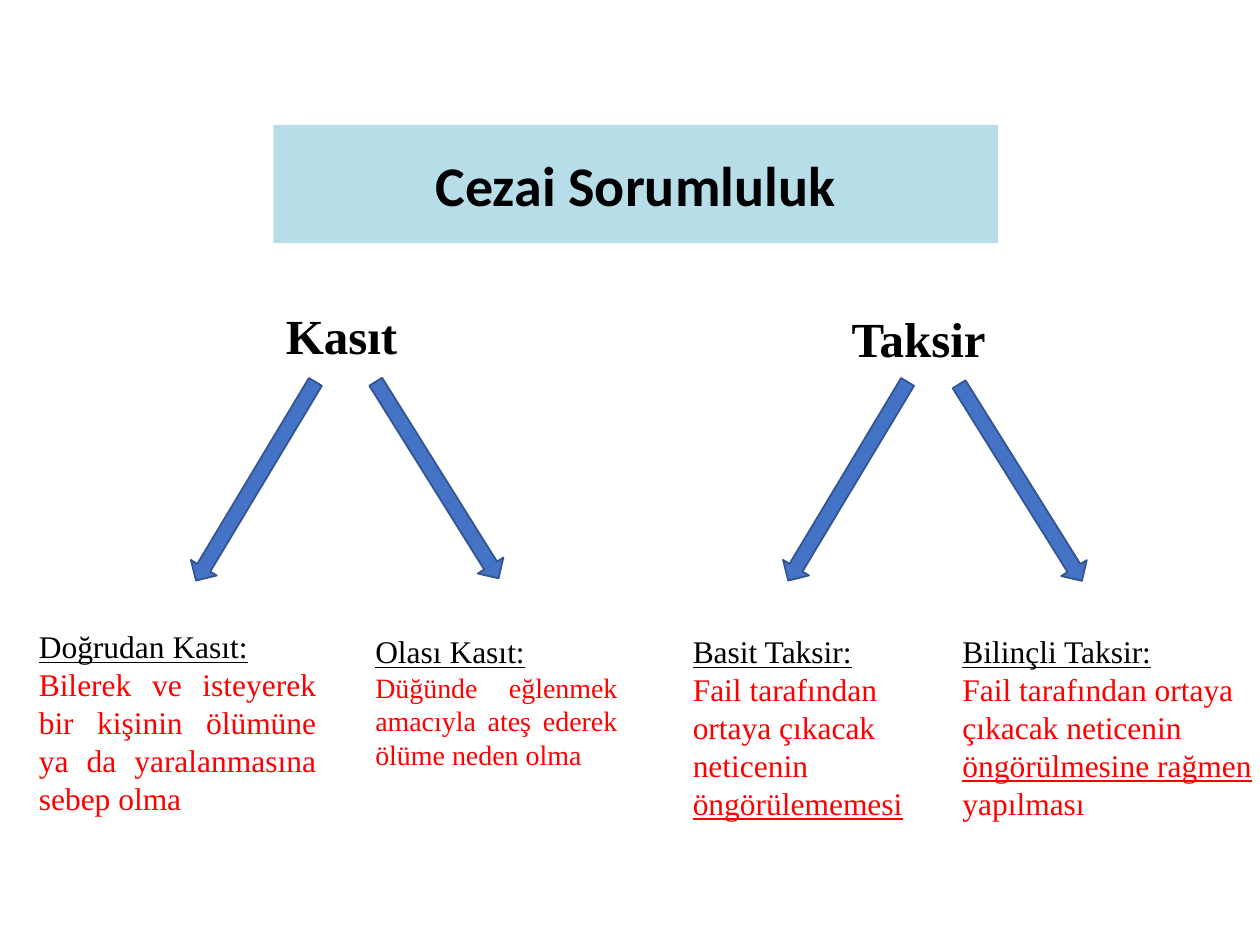
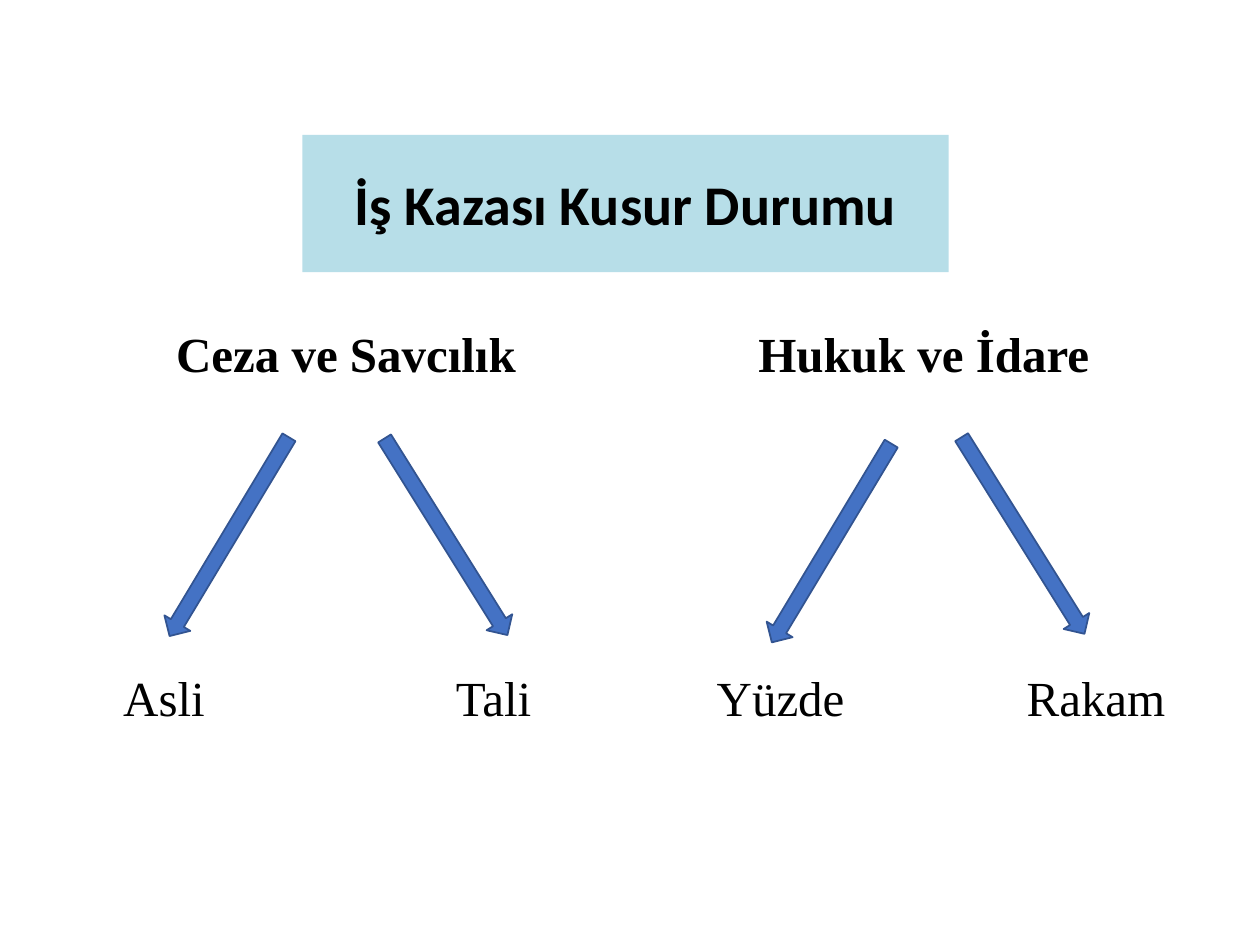
"""Build two slides that branch legal liability and fault into their kinds."""
import pptx
import pptx.dml.color
import pptx.enum.shapes
import pptx.enum.text
import pptx.util

Inches = pptx.util.Inches
ALIGN = pptx.enum.text.PP_ALIGN
AUTO_SIZE = pptx.enum.text.MSO_AUTO_SIZE

BAND = "B7DEE8"
ARROW_FILL = "4472C4"
ARROW_LINE = "325491"
BLACK = "000000"
RED = "FF0000"
TITLE_FONT = "Calibri"
BODY_FONT = "Times New Roman"
ARROW_SIZE = (0.24, 1.84)
LEFT_TURN, RIGHT_TURN = 31, 328


def color(hex_code):
    return pptx.dml.color.RGBColor.from_string(hex_code)


def set_font(paragraph, name, size, hex_code=BLACK, bold=False):
    font = paragraph.font
    font.name = name
    font.size = pptx.util.Pt(size)
    font.bold = bold
    font.color.rgb = color(hex_code)


def add_titled_slide(deck, text, left, top, width, height):
    slide = deck.slides.add_slide(deck.slide_layouts[5])
    title = slide.shapes.title
    title.left, title.top = Inches(left), Inches(top)
    title.width, title.height = Inches(width), Inches(height)
    title.fill.solid()
    title.fill.fore_color.rgb = color(BAND)
    frame = title.text_frame
    frame.text = text
    frame.auto_size = AUTO_SIZE.NONE
    frame.vertical_anchor = pptx.enum.text.MSO_ANCHOR.MIDDLE
    heading = frame.paragraphs[0]
    heading.alignment = ALIGN.CENTER
    set_font(heading, TITLE_FONT, 32, bold=True)
    return slide


def add_text_frame(slide, left, top, width, height, wrap):
    box = slide.shapes.add_textbox(
        Inches(left), Inches(top), Inches(width), Inches(height))
    frame = box.text_frame
    frame.word_wrap = wrap
    frame.auto_size = AUTO_SIZE.SHAPE_TO_FIT_TEXT
    return frame


def add_label(slide, text, left, top, width, height=0.57,
              bold=False, wrap=False, spacing=None):
    frame = add_text_frame(slide, left, top, width, height, wrap)
    label = frame.paragraphs[0]
    label.line_spacing = spacing
    set_font(label, BODY_FONT, 28, bold=bold)
    label.add_run().text = text


def add_definition(slide, term, parts, left, top, width, height,
                   size=18, align=ALIGN.LEFT):
    frame = add_text_frame(slide, left, top, width, height, True)
    heading = frame.paragraphs[0]
    set_font(heading, BODY_FONT, 18)
    heading.font.underline = True
    heading.add_run().text = term
    meaning = frame.add_paragraph()
    meaning.alignment = align
    set_font(meaning, BODY_FONT, size, RED)
    for text, underlined in parts:
        run = meaning.add_run()
        run.text = text
        run.font.underline = underlined


def add_arrow(slide, left, top, turn):
    arrow = slide.shapes.add_shape(
        pptx.enum.shapes.MSO_SHAPE.DOWN_ARROW,
        Inches(left), Inches(top), *map(Inches, ARROW_SIZE))
    arrow.rotation = turn
    arrow.shadow.inherit = False
    arrow.fill.solid()
    arrow.fill.fore_color.rgb = color(ARROW_FILL)
    arrow.line.color.rgb = color(ARROW_LINE)
    arrow.line.width = pptx.util.Pt(1)


def add_branches(slide, places):
    for index, (left, top) in enumerate(places):
        add_arrow(slide, left, top, RIGHT_TURN if index % 2 else LEFT_TURN)


def build_liability(deck):
    slide = add_titled_slide(deck, "Cezai Sorumluluk", 2.17, 0.99, 5.75, 0.94)
    add_label(slide, "Kasıt", 2.17, 2.43, 1.1, 0.53, bold=True, spacing=0.9)
    add_label(slide, "Taksir", 6.66, 2.4, 1.28, bold=True)
    add_branches(slide, [(1.91, 2.9), (3.35, 2.89), (6.61, 2.9), (7.98, 2.91)])
    add_definition(
        slide, "Doğrudan Kasıt:",
        [("Bilerek ve isteyerek bir kişinin ölümüne ya da "
          "yaralanmasına sebep olma", False)],
        0.21, 4.93, 2.4, 1.62, align=ALIGN.JUSTIFY)
    add_definition(
        slide, "Olası Kasıt:",
        [("Düğünde eğlenmek amacıyla ateş ederek ölüme neden olma", False)],
        2.88, 4.97, 2.12, 1.21, size=16, align=ALIGN.JUSTIFY)
    outcome = ("Fail tarafından ortaya çıkacak neticenin ", False)
    add_definition(
        slide, "Basit Taksir:", [outcome, ("öngörülememesi", True)],
        5.4, 4.97, 2.03, 1.62)
    add_definition(
        slide, "Bilinçli Taksir:",
        [outcome, ("öngörülmesine rağmen ", True), ("yapılması", False)],
        7.54, 4.97, 2.5, 1.62)


def build_fault(deck):
    slide = add_titled_slide(
        deck, "İş Kazası Kusur Durumu", 2.4, 1.07, 5.13, 1.09)
    add_label(slide, "Ceza ve Savcılık", 1.3, 2.57, 2.93, 0.53,
              bold=True, spacing=0.9)
    add_label(slide, "Hukuk ve İdare", 5.92, 2.52, 3.23, bold=True, wrap=True)
    add_branches(slide, [(1.7, 3.34), (3.42, 3.34), (6.48, 3.39), (8, 3.33)])
    add_label(slide, "Asli", 0.88, 5.25, 0.94, wrap=True)
    for text, left, width in [
            ("Tali", 3.52, 0.81), ("Yüzde", 5.59, 1.23), ("Rakam", 8.05, 1.31)]:
        add_label(slide, text, left, 5.25, width)


def main():
    deck = pptx.Presentation()
    deck.slide_width, deck.slide_height = Inches(10), Inches(7.5)
    build_liability(deck)
    build_fault(deck)
    deck.save("out.pptx")


if __name__ == "__main__":
    main()
